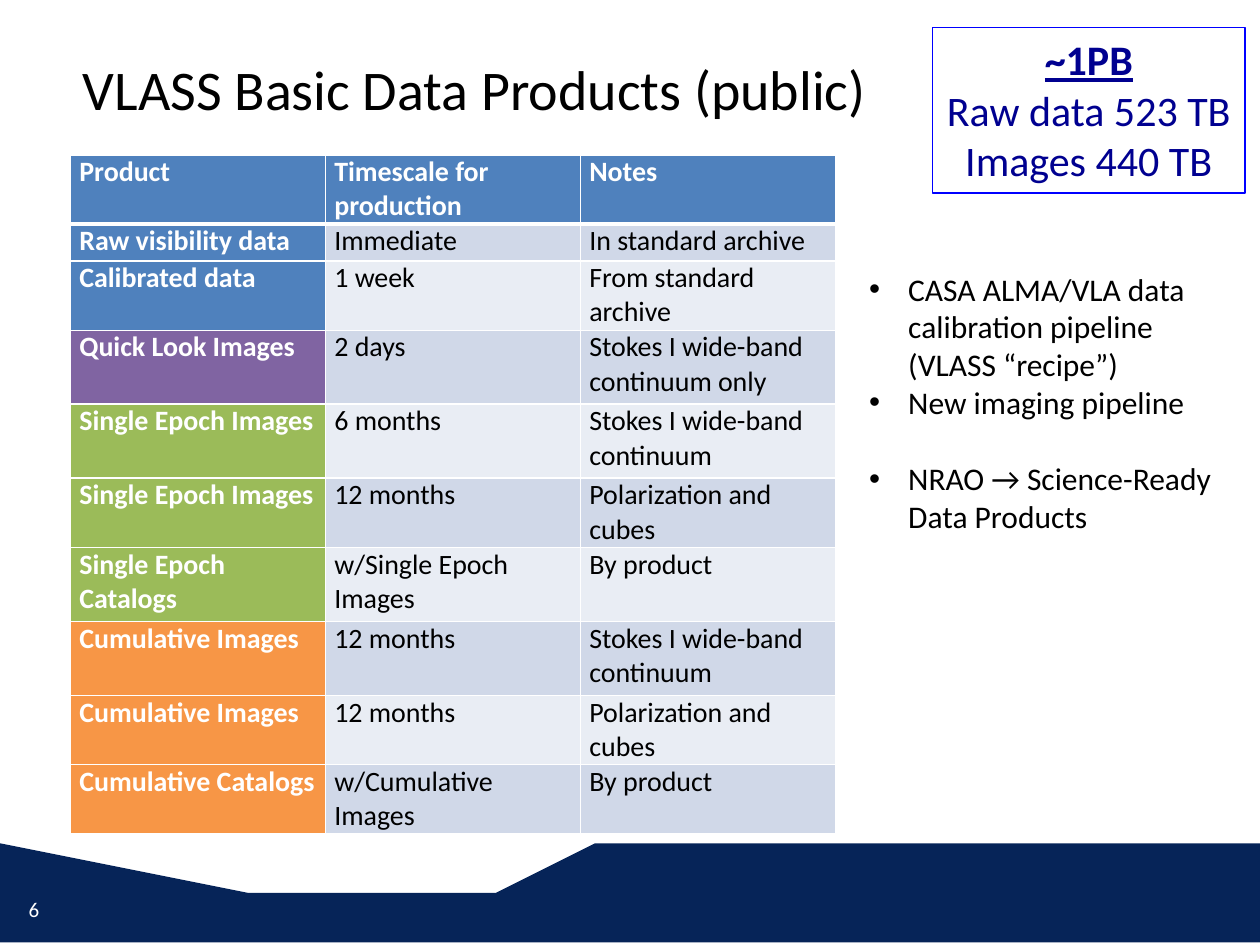
from dataclasses import dataclass

from lxml import etree
from pptx import Presentation
from pptx import util as u
from pptx.dml.color import RGBColor
from pptx.enum import shapes, text
from pptx.oxml.ns import qn

Cm, Pt = u.Cm, u.Pt


@dataclass(frozen=True)
class Theme:
    font: str = "Calibri"
    white: str = "FFFFFF"
    black: str = "000000"
    navy: str = "062458"
    ink: str = "000090"
    frame: str = "0000FF"
    blue: str = "4F81BD"
    purple: str = "8064A2"
    green: str = "9BBB59"
    orange: str = "F79646"
    dark: str = "D0D8E8"
    light: str = "E9EDF4"
    title: int = 32
    total: int = 24
    body: int = 18
    cell: int = 16
    page: int = 12


T = Theme()


def add_run(para, words, size, color, bold=False, under=False):
    run = para.add_run()
    run.text = words
    font = run.font
    font.name, font.size = T.font, Pt(size)
    font.bold, font.underline = bold, under
    font.color.rgb = RGBColor.from_string(color)


def add_box(left, top, width, height):
    box = slide.shapes.add_textbox(Cm(left), Cm(top), Cm(width), Cm(height))
    box.text_frame.word_wrap = True
    return box.text_frame


deck = Presentation()
deck.slide_width, deck.slide_height = Cm(25.4), Cm(19.05)
slide = deck.slides.add_slide(deck.slide_layouts[6])

# Wave along the foot
wave = [(-0.23, 17.15), (5.08, 17.53), (7.98, 17.65), (10.36, 17.53),
        (12.45, 17.4), (16.71, 17.09), (21.13, 16.99), (24.87, 17.15),
        (25.76, 17.22), (25.73, 19.3), (-0.18, 19.25)]
pen = slide.shapes.build_freeform(*wave[0], scale=Cm(1))
pen.add_line_segments(wave[1:], close=True)
foot = pen.convert_to_shape()
foot.shadow.inherit = False
foot.fill.solid()
foot.fill.fore_color.rgb = RGBColor.from_string(T.navy)
foot.line.fill.background()

# Page number
page = add_box(0.58, 18.08, 10.46, 0.61)
page.word_wrap = False
page.margin_left = page.margin_right = page.margin_top = page.margin_bottom = 0
add_run(page.paragraphs[0], "6", T.page, T.white)

# Title
title = add_box(1.42, 0.97, 23.98, 1.45)
add_run(title.paragraphs[0], "VLASS Basic Data Products (public)", T.title, T.black)

# Data volume box
total = slide.shapes.add_shape(shapes.MSO_SHAPE.RECTANGLE,
                               Cm(18.8), Cm(0.56), Cm(6.3), Cm(3.33))
total.shadow.inherit = False
total.fill.background()
total.line.color.rgb = RGBColor.from_string(T.frame)
total.line.width = Pt(0.75)
frame = total.text_frame
frame.word_wrap = False
frame.auto_size = text.MSO_AUTO_SIZE.SHAPE_TO_FIT_TEXT
frame.vertical_anchor = text.MSO_ANCHOR.TOP
for i, words in enumerate(["~1PB", "Raw data 523 TB", "Images 440 TB"]):
    para = frame.paragraphs[0] if i == 0 else frame.add_paragraph()
    para.alignment = text.PP_ALIGN.CENTER
    add_run(para, words, T.total, T.ink, bold=i == 0, under=i == 0)

# Product table: key colour, row height, cells
rows = [
    (T.blue, 1.4, "Product", "Timescale for production", "Notes"),
    (T.blue, 0.74, "Raw visibility data", "Immediate", "In standard archive"),
    (T.blue, 1.4, "Calibrated data", "1 week", "From standard archive"),
    (T.purple, 1.49, "Quick Look Images", "2 days", "Stokes I wide-band continuum only"),
    (T.green, 1.49, "Single Epoch Images", "6 months", "Stokes I wide-band continuum"),
    (T.green, 1.4, "Single Epoch Images", "12 months", "Polarization and cubes"),
    (T.green, 1.49, "Single Epoch Catalogs", "w/Single Epoch Images", "By product"),
    (T.orange, 1.49, "Cumulative Images", "12 months", "Stokes I wide-band continuum"),
    (T.orange, 1.4, "Cumulative Images", "12 months", "Polarization and cubes"),
    (T.orange, 1.4, "Cumulative Catalogs", "w/Cumulative Images", "By product"),
]
high = sum(row[1] for row in rows)
table = slide.shapes.add_table(len(rows), 3, Cm(1.42), Cm(3.12),
                               Cm(15.42), Cm(high)).table
for col in table.columns:
    col.width = Cm(5.14)
for r, (key, tall, *words) in enumerate(rows):
    table.rows[r].height = Cm(tall)
    for c, word in enumerate(words):
        cell = table.cell(r, c)
        cell.margin_left = cell.margin_right = Cm(0.18)
        cell.margin_top = cell.margin_bottom = 0
        # White rules, thick under the heading
        props = cell._tc.get_or_add_tcPr()
        for side in "LRTB":
            thick = (r, side) in [(0, "B"), (1, "T")]
            rule = etree.SubElement(props, qn("a:ln" + side),
                                    w=str(Pt(3 if thick else 1)))
            fill = etree.SubElement(rule, qn("a:solidFill"))
            etree.SubElement(fill, qn("a:srgbClr"), val=T.white)
        head = r == 0 or c == 0
        band = T.dark if r % 2 else T.light
        cell.fill.solid()
        cell.fill.fore_color.rgb = RGBColor.from_string(key if head else band)
        add_run(cell.text_frame.paragraphs[0], word, T.cell,
                T.white if head else T.black, bold=head)

# Pipeline notes: words and space before
notes = [("CASA ALMA/VLA data calibration pipeline (VLASS “recipe”)", 0),
         ("New imaging pipeline", 0),
         ("NRAO → Science-Ready Data Products", 22)]
frame = add_box(17.27, 5.31, 7.85, 6.4)
for i, (words, gap) in enumerate(notes):
    para = frame.paragraphs[0] if i == 0 else frame.add_paragraph()
    props = para._p.get_or_add_pPr()
    props.set("marL", str(Cm(0.79)))
    props.set("indent", str(-Cm(0.79)))
    etree.SubElement(props, qn("a:buFont"), typeface="Arial")
    etree.SubElement(props, qn("a:buChar"), char="•")
    if gap:
        para.space_before = Pt(gap)
    add_run(para, words, T.body, T.black)

deck.save("out.pptx")
